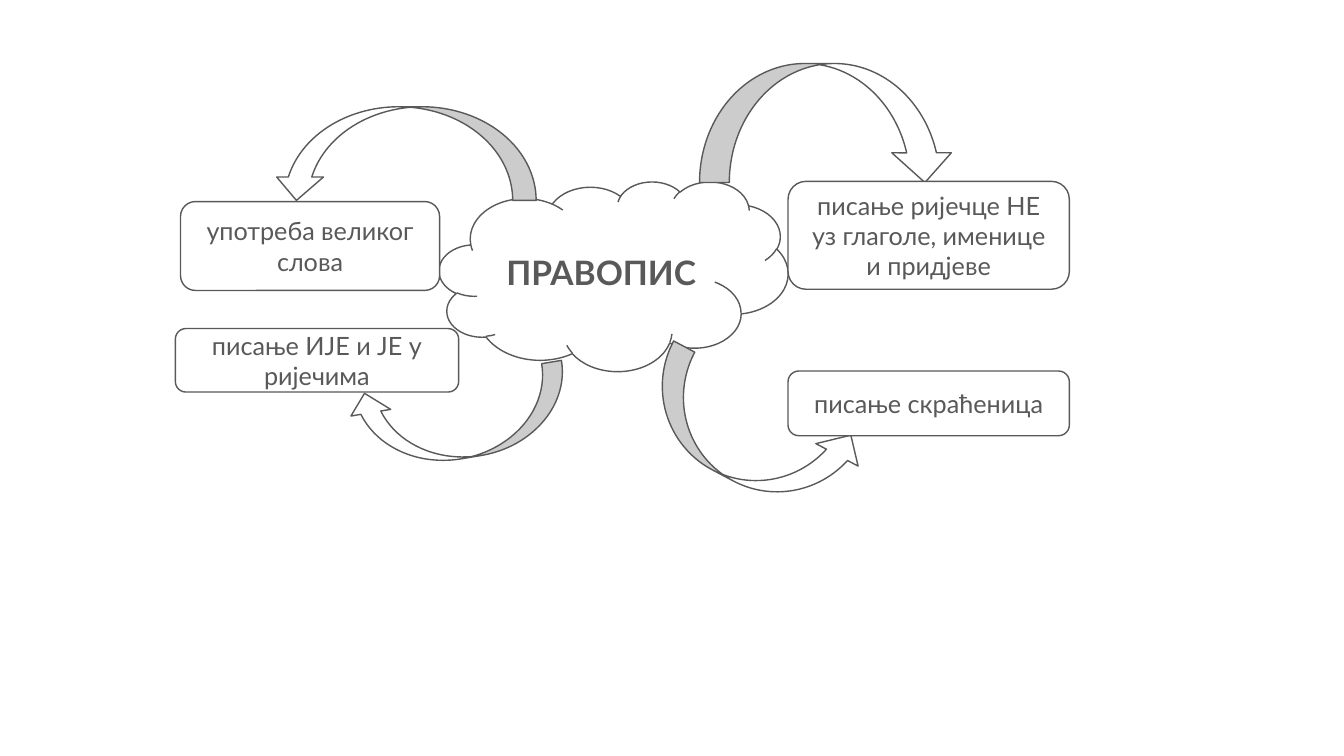
from pptx import Presentation
from pptx.dml.color import RGBColor
from pptx.enum.shapes import MSO_SHAPE
from pptx.enum.text import MSO_ANCHOR, PP_ALIGN
from pptx.oxml.ns import qn
from pptx.util import Cm, Pt

COLOURS = {"paper": "FFFFFF", "ink": "595959"}
CENTRE_FONT = {"name": "Lato", "size": Pt(24), "bold": True}
TOPIC_FONT = {"name": "Lato", "size": Pt(18), "bold": False}

TOPICS = [
    {
        "text": "употреба великог слова",
        "box": (4.55, 5.08, 6.53, 2.24),
        "arrow": (6.88, 2.69, 6.63, 2.36),
        "rotation": 180,
    },
    {
        "text": "писање ријечце НЕ уз глаголе, именице и придјеве",
        "box": (19.86, 4.57, 7.09, 2.72),
        "arrow": (17.63, 1.6, 6.43, 3),
        "rotation": 180,
        "mirrored": True,
    },
    {
        "text": "писање скраћеница",
        "box": (19.86, 9.35, 7.09, 1.63),
        "arrow": (16.08, 9.78, 5.66, 2.41),
        "rotation": 28,
    },
    {
        "text": "писање ИЈЕ и ЈЕ у ријечима",
        "box": (4.42, 8.28, 7.14, 1.6),
        "arrow": (10.57, 7.77, 2.03, 5.54),
        "rotation": 80.5,
        "preset": MSO_SHAPE.CURVED_LEFT_ARROW,
    },
]


def colour(name):
    return RGBColor.from_string(COLOURS[name])


def add_outlined(slide, preset, place):
    outlined = slide.shapes.add_shape(preset, *map(Cm, place))
    outlined.shadow.inherit = False
    outlined.fill.solid()
    outlined.fill.fore_color.rgb = colour("paper")
    outlined.line.color.rgb = colour("ink")
    outlined.line.width = Pt(1)
    return outlined


def add_label(slide, preset, place, text, font_format):
    frame = add_outlined(slide, preset, place).text_frame
    frame.word_wrap = True
    frame.vertical_anchor = MSO_ANCHOR.MIDDLE
    paragraph = frame.paragraphs[0]
    paragraph.alignment = PP_ALIGN.CENTER
    run = paragraph.add_run()
    run.text = text
    run.font.color.rgb = colour("ink")
    for attribute, value in font_format.items():
        setattr(run.font, attribute, value)


def add_arrow(slide, place, rotation, preset, mirrored):
    arrow = add_outlined(slide, preset, place)
    arrow.rotation = rotation
    if mirrored:
        arrow.element.spPr.find(qn("a:xfrm")).set("flipH", "1")


def main():
    presentation = Presentation()
    presentation.slide_width = Cm(33.87)
    presentation.slide_height = Cm(19.05)
    slide = presentation.slides.add_slide(presentation.slide_layouts[6])

    add_label(slide, MSO_SHAPE.CLOUD, (11.07, 4.57, 8.79, 4.78), "ПРАВОПИС", CENTRE_FONT)
    for topic in TOPICS:
        add_arrow(
            slide,
            topic["arrow"],
            topic["rotation"],
            topic.get("preset", MSO_SHAPE.CURVED_UP_ARROW),
            topic.get("mirrored", False),
        )
        add_label(slide, MSO_SHAPE.ROUNDED_RECTANGLE, topic["box"], topic["text"], TOPIC_FONT)

    presentation.save("out.pptx")


if __name__ == "__main__":
    main()
